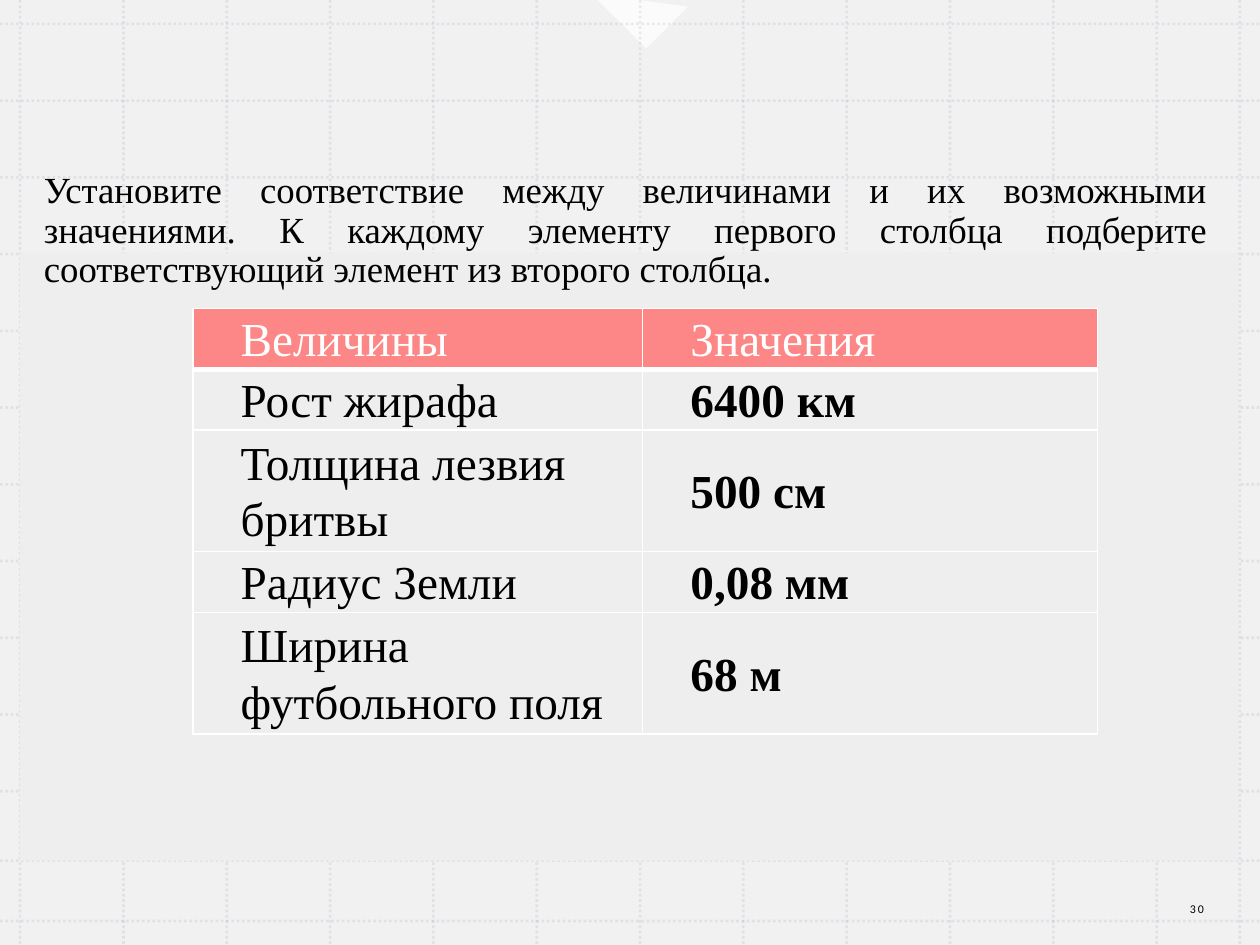
import lxml.etree
import pptx
import pptx.dml.color
import pptx.enum.dml
import pptx.enum.shapes
import pptx.enum.text
import pptx.oxml.ns
import pptx.util
from dataclasses import dataclass

Inches, Pt = pptx.util.Inches, pptx.util.Pt
qn = pptx.oxml.ns.qn
SHAPES = pptx.enum.shapes.MSO_SHAPE
ALIGN = pptx.enum.text.PP_ALIGN
MIDDLE = pptx.enum.text.MSO_ANCHOR.MIDDLE

TASK = ("Установите соответствие между величинами и их возможными значениями. "
        "К каждому элементу первого столбца подберите соответствующий элемент из второго столбца.")
PAGE_NUMBER = "30"
ROWS = [
    ("Величины", "Значения"),
    ("Рост жирафа", "6400 км"),
    ("Толщина лезвия бритвы", "500 см"),
    ("Радиус Земли", "0,08 мм"),
    ("Ширина футбольного поля", "68 м"),
]
COLUMN_WIDTHS = [3.57, 3.61]
ROW_HEIGHTS = [0.48, 0.48, 0.96, 0.48, 0.96]
WIDTH, HEIGHT = 10, 7.5
GRID_X = [0.16 + 0.82 * step for step in range(12)] + [9.84]
GRID_Y = [0.19 + 0.609 * step for step in range(11)] + [6.83, 7.31]


@dataclass(frozen=True)
class Theme:
    paper: str = "EEEEEE"
    white: str = "FFFFFF"
    grid: str = "B495C2"
    header: str = "FD8686"
    title: str = "010101"
    text: str = "000000"
    serif: str = "Times New Roman"
    sans: str = "Calibri"
    title_size: float = 21
    table_size: float = 27
    number_size: float = 6.8


THEME = Theme()


def rgb(value):
    return pptx.dml.color.RGBColor.from_string(value)


def set_opacity(element, percent):
    for color in element.iter(qn("a:srgbClr")):
        lxml.etree.SubElement(color, qn("a:alpha"), val=str(percent * 1000))


def add_block(slide, kind, box, color, opacity=100):
    shape = slide.shapes.add_shape(kind, *map(Inches, box))
    shape.shadow.inherit = False
    shape.line.fill.background()
    shape.fill.solid()
    shape.fill.fore_color.rgb = rgb(color)
    if opacity < 100:
        set_opacity(shape._element.spPr, opacity)
    return shape


def add_grid_line(slide, start, end):
    connector = slide.shapes.add_connector(
        pptx.enum.shapes.MSO_CONNECTOR.STRAIGHT, *map(Inches, start + end))
    connector.line.width = Pt(1.5)
    connector.line.color.rgb = rgb(THEME.grid)
    connector.line.dash_style = pptx.enum.dml.MSO_LINE.ROUND_DOT
    properties = connector._element.spPr
    set_opacity(properties, 20)
    lxml.etree.SubElement(properties, qn("a:effectLst"))


def add_run(paragraph, text, font, size, color, bold=False):
    run = paragraph.add_run()
    run.text = text
    run.font.name = font
    run.font.size = Pt(size)
    run.font.bold = bold
    run.font.color.rgb = rgb(color)
    return run


def add_text(slide, box, alignment, *run_style):
    frame = slide.shapes.add_textbox(*map(Inches, box)).text_frame
    frame.word_wrap = True
    frame.vertical_anchor = MIDDLE
    paragraph = frame.paragraphs[0]
    paragraph.alignment = alignment
    return paragraph, add_run(paragraph, *run_style)


def set_borders(cell, top, bottom):
    properties = cell._tc.get_or_add_tcPr()
    for side, width in (("L", 1), ("R", 1), ("T", top), ("B", bottom)):
        line = lxml.etree.SubElement(properties, qn(f"a:ln{side}"), w=str(Pt(width)))
        fill = lxml.etree.SubElement(line, qn("a:solidFill"))
        lxml.etree.SubElement(fill, qn("a:srgbClr"), val=THEME.white)


def fill_cell(cell, text, row, column):
    is_header = row == 0
    set_borders(cell, 3 if row == 1 else 1, 3 if is_header else 1)
    cell.fill.solid()
    cell.fill.fore_color.rgb = rgb(THEME.header if is_header else THEME.paper)
    cell.margin_left = cell.margin_right = cell.margin_top = cell.margin_bottom = 0
    cell.vertical_anchor = MIDDLE
    paragraph = cell.text_frame.paragraphs[0]
    paragraph.line_spacing = 1.07
    paragraph.space_after = Pt(7.5)
    paragraph._p.get_or_add_pPr().set("marL", str(Inches(0.38)))
    add_run(paragraph, text, THEME.serif, THEME.table_size,
            THEME.white if is_header else THEME.text, not is_header and column == 1)


def add_matching_table(slide):
    box = (1.53, 2.45, sum(COLUMN_WIDTHS), sum(ROW_HEIGHTS))
    table = slide.shapes.add_table(len(ROWS), len(COLUMN_WIDTHS), *map(Inches, box)).table
    table.horz_banding = False
    for column, width in zip(table.columns, COLUMN_WIDTHS):
        column.width = Inches(width)
    for row, height in zip(table.rows, ROW_HEIGHTS):
        row.height = Inches(height)
    for row, texts in enumerate(ROWS):
        for column, text in enumerate(texts):
            fill_cell(table.cell(row, column), text, row, column)


def main():
    """Build the slide with the matching exercise and save it."""
    presentation = pptx.Presentation()
    presentation.slide_width, presentation.slide_height = Inches(WIDTH), Inches(HEIGHT)
    slide = presentation.slides.add_slide(presentation.slide_layouts[6])
    slide.background.fill.solid()
    slide.background.fill.fore_color.rgb = rgb(THEME.white)

    add_block(slide, SHAPES.RECTANGLE, (0, 0, WIDTH, HEIGHT), THEME.paper, 80)
    corner = add_block(slide, SHAPES.RIGHT_TRIANGLE, (4.84, -0.31, 0.47, 0.62), THEME.white, 75)
    corner.rotation = 315
    for x in GRID_X:
        add_grid_line(slide, (x, 0), (x, HEIGHT))
    for y in GRID_Y:
        add_grid_line(slide, (0, y), (WIDTH, y))
    add_block(slide, SHAPES.RECTANGLE, (0.16, 2.01, 9.67, 4.82), THEME.paper)

    paragraph, _ = add_text(slide, (0.25, 1.22, 9.43, 1.23), ALIGN.JUSTIFY,
                            TASK, THEME.serif, THEME.title_size, THEME.title)
    paragraph.line_spacing = 0.9
    _, number = add_text(slide, (9.17, 7.06, 0.66, 0.3), ALIGN.CENTER,
                         PAGE_NUMBER, THEME.sans, THEME.number_size, THEME.text)
    number.font._element.set("spc", "110")
    add_matching_table(slide)
    presentation.save("out.pptx")


if __name__ == "__main__":
    main()
